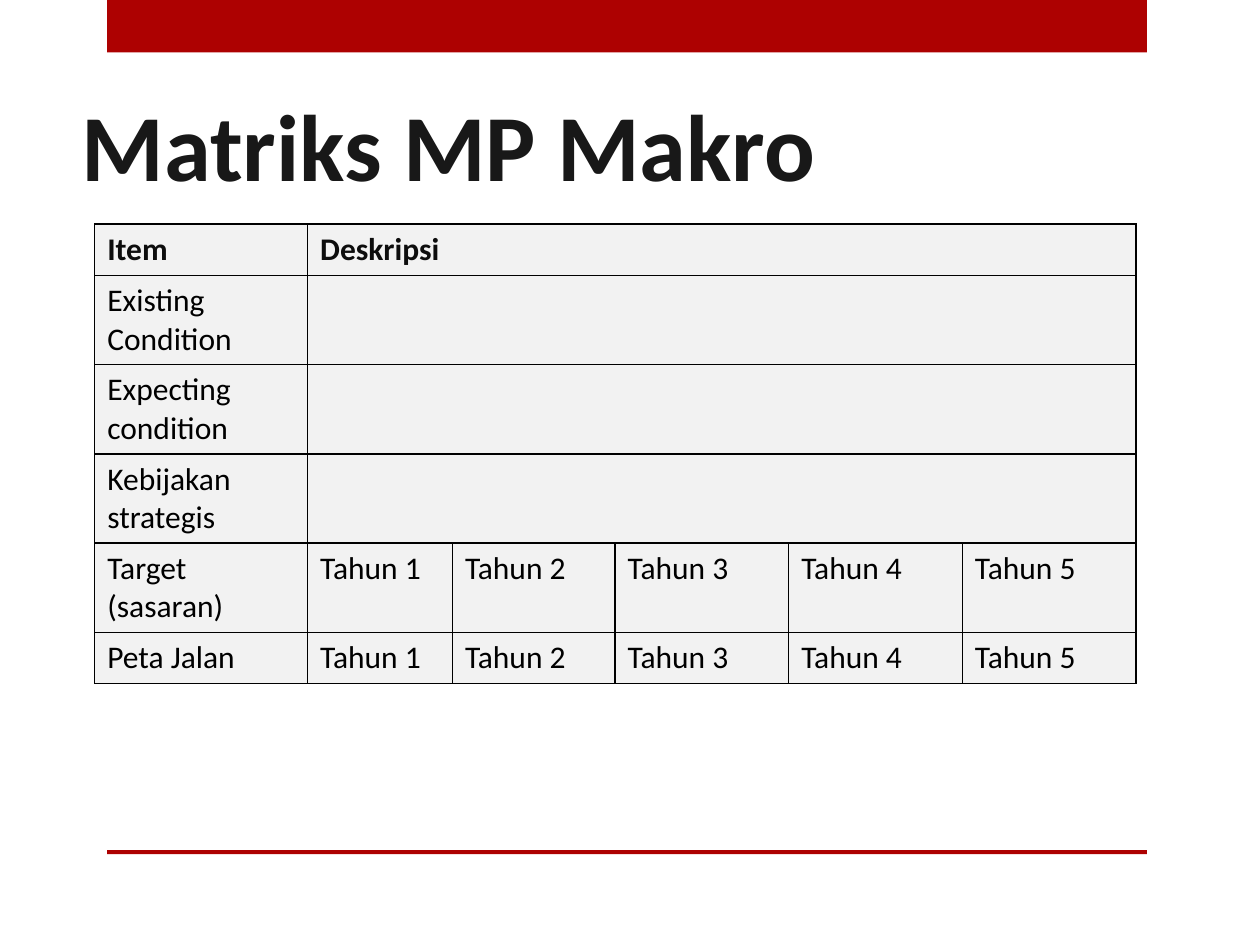
from dataclasses import dataclass

from lxml.etree import SubElement
from pptx import Presentation
from pptx.dml.color import RGBColor
from pptx.enum.shapes import MSO_SHAPE
from pptx.enum.text import MSO_ANCHOR
from pptx.oxml.ns import qn
from pptx.slide import Slide
from pptx.table import Table, _Cell
from pptx.util import Cm, Pt

RED = RGBColor(0xAD, 0x01, 0x01)
TITLE_GREY = RGBColor(0x18, 0x18, 0x18)
HEADER_GREY = RGBColor(0x0D, 0x0D, 0x0D)
CELL_GREY = RGBColor(0xF2, 0xF2, 0xF2)
BLACK = RGBColor(0x00, 0x00, 0x00)
FONT = "Calibri"
COLUMN_WIDTHS = (4.29, 2.92, 3.28, 3.5, 3.5, 3.5)
YEARS = tuple(f"Tahun {year}" for year in range(1, 6))


@dataclass(frozen=True)
class Band:
    top: float
    height: float


@dataclass(frozen=True)
class MatrixRow:
    item: str
    values: tuple[str, ...] = ("",)
    height: float = 1.8
    header: bool = False


BANDS = (Band(0, 1.06), Band(17.14, 0.08))
MATRIX_ROWS = (
    MatrixRow("Item", ("Deskripsi",), 1.03, True),
    MatrixRow("Existing Condition"),
    MatrixRow("Expecting condition"),
    MatrixRow("Kebijakan strategis"),
    MatrixRow("Target (sasaran)", YEARS),
    MatrixRow("Peta Jalan", YEARS, 1.03),
)


def draw_band(slide: Slide, band: Band) -> None:
    shape = slide.shapes.add_shape(
        MSO_SHAPE.RECTANGLE, Cm(2.16), Cm(band.top), Cm(20.96), Cm(band.height)
    )
    shape.shadow.inherit = False
    shape.fill.solid()
    shape.fill.fore_color.rgb = RED
    shape.line.fill.background()


def draw_title(slide: Slide, text: str) -> None:
    title = slide.shapes.add_textbox(Cm(1.4), Cm(0.99), Cm(22.86), Cm(3.18))
    frame = title.text_frame
    frame.word_wrap = True
    frame.vertical_anchor = MSO_ANCHOR.BOTTOM
    paragraph = frame.paragraphs[0]
    paragraph.text = text
    paragraph.font.name = FONT
    paragraph.font.size = Pt(54)
    paragraph.font.bold = True
    paragraph.font.color.rgb = TITLE_GREY


def style_cell(cell: _Cell) -> None:
    properties = cell._tc.get_or_add_tcPr()
    for side in ("a:lnL", "a:lnR", "a:lnT", "a:lnB"):
        border = SubElement(properties, qn(side), w=str(Pt(1)))
        fill = SubElement(border, qn("a:solidFill"))
        SubElement(fill, qn("a:srgbClr"), val=str(BLACK))
    cell.fill.solid()
    cell.fill.fore_color.rgb = CELL_GREY


def write_cell(cell: _Cell, text: str, header: bool) -> None:
    cell.text = text
    paragraph = cell.text_frame.paragraphs[0]
    paragraph.font.name = FONT
    paragraph.font.size = Pt(18)
    paragraph.font.bold = header
    paragraph.font.color.rgb = HEADER_GREY if header else BLACK


def fill_row(table: Table, index: int, row: MatrixRow) -> None:
    table.rows[index].height = Cm(row.height)
    for cell in table.rows[index].cells:
        style_cell(cell)
    if len(row.values) == 1:
        last = len(COLUMN_WIDTHS) - 1
        table.cell(index, 1).merge(table.cell(index, last))
    for column, text in enumerate((row.item, *row.values)):
        write_cell(table.cell(index, column), text, row.header)


def draw_matrix(slide: Slide) -> None:
    table = slide.shapes.add_table(
        len(MATRIX_ROWS),
        len(COLUMN_WIDTHS),
        Cm(1.91),
        Cm(4.52),
        Cm(sum(COLUMN_WIDTHS)),
        Cm(sum(row.height for row in MATRIX_ROWS)),
    ).table
    table.horz_banding = False
    table.first_row = False
    for column, width in zip(table.columns, COLUMN_WIDTHS):
        column.width = Cm(width)
    for index, row in enumerate(MATRIX_ROWS):
        fill_row(table, index, row)


def main() -> None:
    presentation = Presentation()
    presentation.slide_width = Cm(25.4)
    presentation.slide_height = Cm(19.05)
    slide = presentation.slides.add_slide(presentation.slide_layouts[6])
    for band in BANDS:
        draw_band(slide, band)
    draw_title(slide, "Matriks MP Makro")
    draw_matrix(slide)
    presentation.save("out.pptx")


if __name__ == "__main__":
    main()
